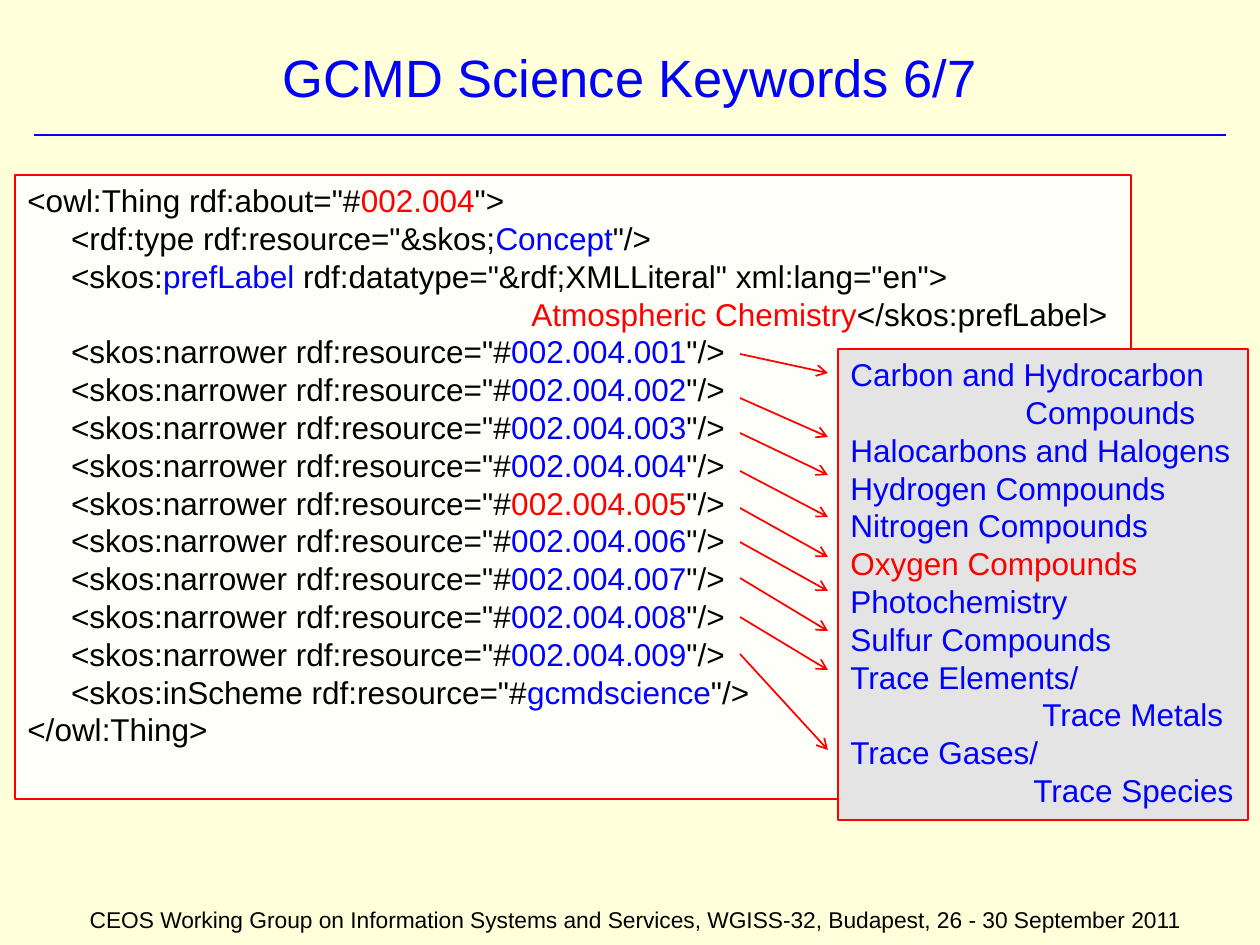
"""Build the GCMD science keywords slide with its SKOS listing and labels."""
from typing import NamedTuple

from lxml.etree import SubElement
from pptx import Presentation
from pptx.dml.color import RGBColor
from pptx.enum.shapes import MSO_CONNECTOR as Connector, MSO_SHAPE as Shape
from pptx.enum.text import MSO_ANCHOR as Anchor, PP_ALIGN as Align
from pptx.oxml.ns import qn
from pptx.util import Emu, Pt

SCALE = 914400 / 126
FONT = "Arial"
COLORS = {
    "page": "FFFFD9",
    "code": "FFFFFA",
    "labels": "E4E4E4",
    "black": "000000",
    "blue": "0000FF",
    "red": "FF0000",
}


class Span(NamedTuple):
    text: str
    color: str = "black"


class Line(NamedTuple):
    spans: list[Span]
    indent: int = 0


class Frame(NamedTuple):
    left: int
    top: int
    width: int
    height: int


class Arrow(NamedTuple):
    start: int
    end: int


def px(value: int) -> Emu:
    return Emu(round(value * SCALE))


def rgb(name: str) -> RGBColor:
    return RGBColor.from_string(COLORS[name])


def place(box, frame: Frame) -> None:
    box.left, box.top, box.width, box.height = map(px, frame)


def write(box, lines: list[Line], size: int, align=Align.LEFT) -> None:
    text_frame = box.text_frame
    text_frame.word_wrap = True
    for number, line in enumerate(lines):
        para = text_frame.add_paragraph() if number else text_frame.paragraphs[0]
        para.alignment = align
        if line.indent:
            para._p.get_or_add_pPr().set("marL", str(px(line.indent)))
        for span in line.spans:
            run = para.add_run()
            run.text = span.text
            run.font.size = Pt(size)
            run.font.name = FONT
            run.font.color.rgb = rgb(span.color)


def add_panel(page, frame: Frame, fill: str, lines: list[Line]) -> None:
    box = page.shapes.add_shape(Shape.RECTANGLE, *map(px, frame))
    box.shadow.inherit = False
    box.fill.solid()
    box.fill.fore_color.rgb = rgb(fill)
    box.line.color.rgb = rgb("red")
    box.line.width = Pt(0.75)
    box.text_frame.vertical_anchor = Anchor.TOP
    box.text_frame.margin_right = 0
    write(box, lines, 18)


def add_line(page, points: tuple[int, int, int, int], color: str, arrow: bool = False) -> None:
    line = page.shapes.add_connector(Connector.STRAIGHT, *map(px, points))
    line.line.color.rgb = rgb(color)
    line.line.width = Pt(1)
    if arrow:
        SubElement(line.line._get_or_add_ln(), qn("a:tailEnd"), type="arrow")
    SubElement(line._element.spPr, qn("a:effectLst"))


def resource(element: str, name: str, color: str = "blue") -> Line:
    opening = f'     <skos:{element} rdf:resource="#'
    return Line([Span(opening), Span(name, color), Span('"/>')])


def code_lines() -> list[Line]:
    narrower = [
        resource("narrower", f"002.004.{number:03}", "red" if number == 5 else "blue")
        for number in range(1, 10)
    ]
    return [
        Line([Span('<owl:Thing rdf:about="#'), Span("002.004", "red"), Span('">')]),
        Line([Span('     <rdf:type rdf:resource="&skos;'), Span("Concept", "blue"), Span('"/>')]),
        Line([
            Span("     <skos:"),
            Span("prefLabel ", "blue"),
            Span('rdf:datatype="&rdf;XMLLiteral" xml:lang="en">'),
        ]),
        Line([Span("Atmospheric Chemistry", "red"), Span("</skos:prefLabel>")], 504),
        *narrower,
        resource("inScheme", "gcmdscience"),
        Line([Span("</owl:Thing>")]),
    ]


def label(text: str, indent: int = 0, color: str = "blue") -> Line:
    return Line([Span(text, color)], indent)


LABELS = [
    label("Carbon and Hydrocarbon"),
    label("Compounds", 175),
    label("Halocarbons and Halogens"),
    label("Hydrogen Compounds"),
    label("Nitrogen Compounds"),
    label("Oxygen Compounds", color="red"),
    label("Photochemistry"),
    label("Sulfur Compounds"),
    label("Trace Elements/"),
    label("Trace Metals", 192),
    label("Trace Gases/"),
    label("Trace Species", 183),
]
ARROWS = [
    Arrow(354, 373),
    Arrow(398, 437),
    Arrow(433, 475),
    Arrow(471, 517),
    Arrow(508, 557),
    Arrow(542, 591),
    Arrow(578, 631),
    Arrow(617, 670),
    Arrow(654, 750),
]
FOOTER = (
    "CEOS Working Group on Information Systems and Services, "
    "WGISS-32, Budapest, 26 - 30 September 2011"
)


def main() -> None:
    deck = Presentation()
    deck.slide_width, deck.slide_height = px(1260), px(945)
    page = deck.slides.add_slide(deck.slide_layouts[5])
    page.background.fill.solid()
    page.background.fill.fore_color.rgb = rgb("page")

    add_line(page, (34, 135, 1226, 135), "blue")
    title = page.shapes.title
    place(title, Frame(63, 28, 1134, 97))
    title.text_frame.vertical_anchor = Anchor.MIDDLE
    write(title, [label("GCMD Science Keywords 6/7")], 30, Align.CENTER)

    add_panel(page, Frame(15, 175, 1116, 624), "code", code_lines())
    add_panel(page, Frame(838, 349, 410, 471), "labels", LABELS)
    for arrow in ARROWS:
        add_line(page, (740, arrow.start, 828, arrow.end), "red", arrow=True)

    footer = page.shapes.add_textbox(*map(px, Frame(44, 900, 1181, 45)))
    write(footer, [Line([Span(FOOTER)])], 13, Align.CENTER)
    deck.save("out.pptx")


if __name__ == "__main__":
    main()
